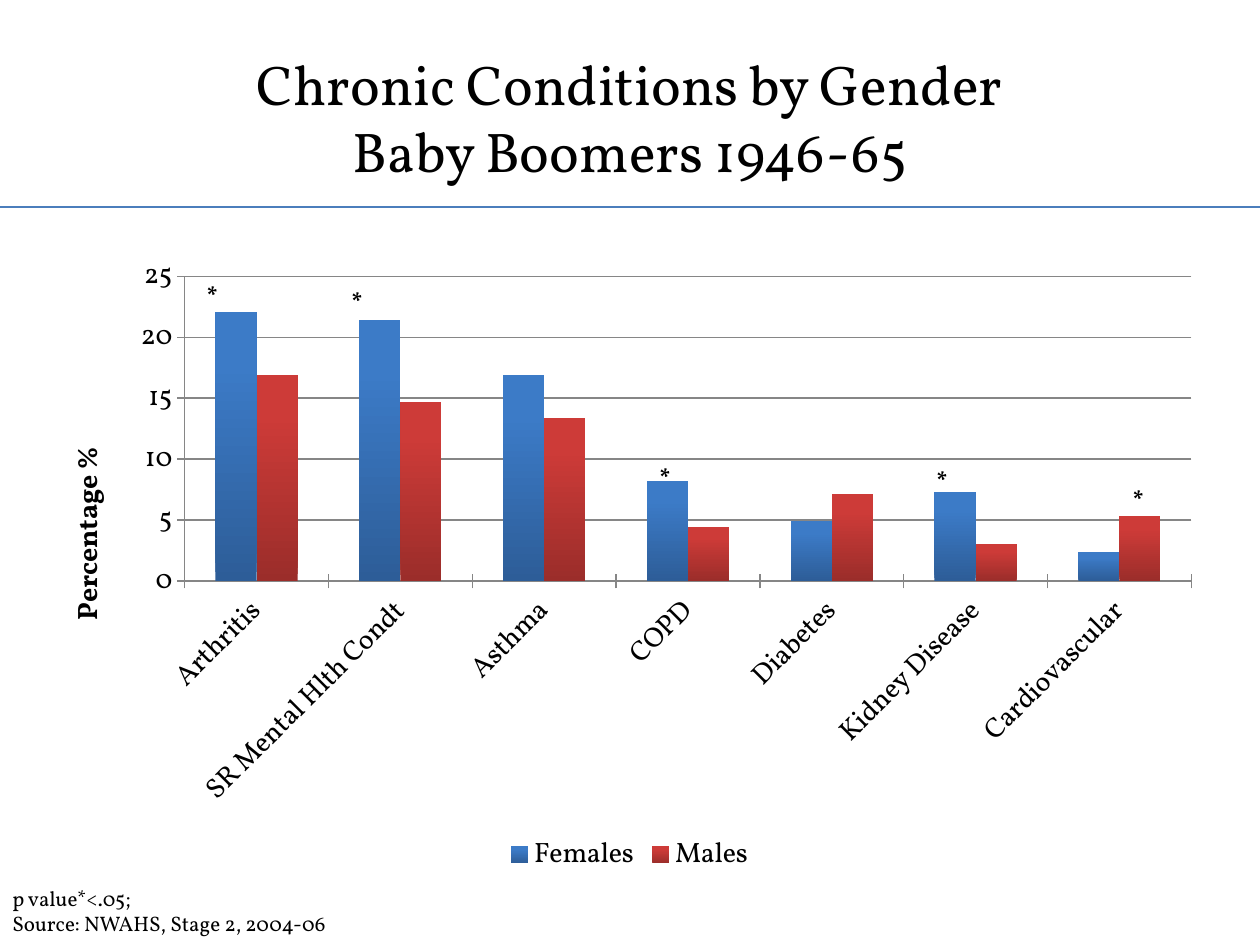
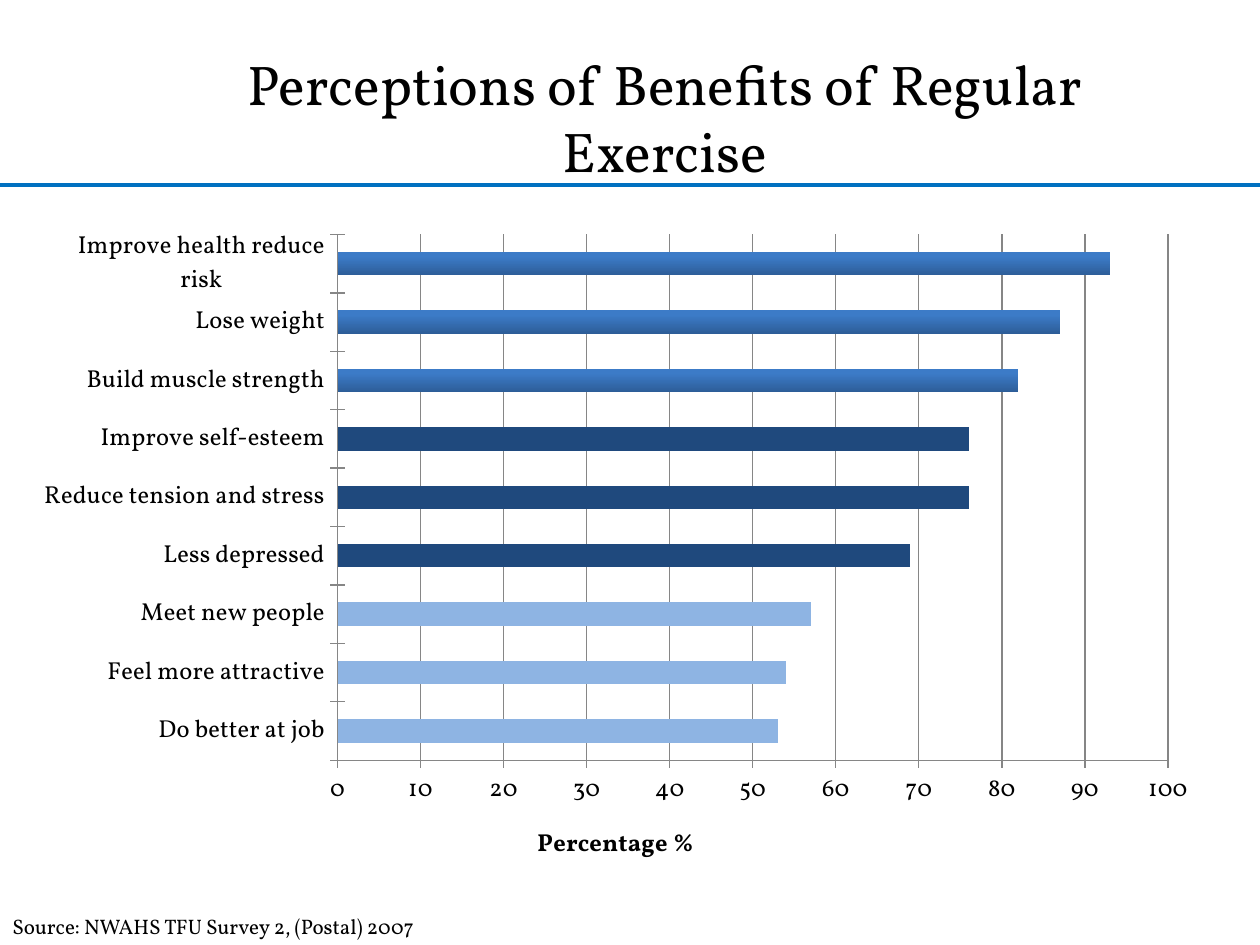
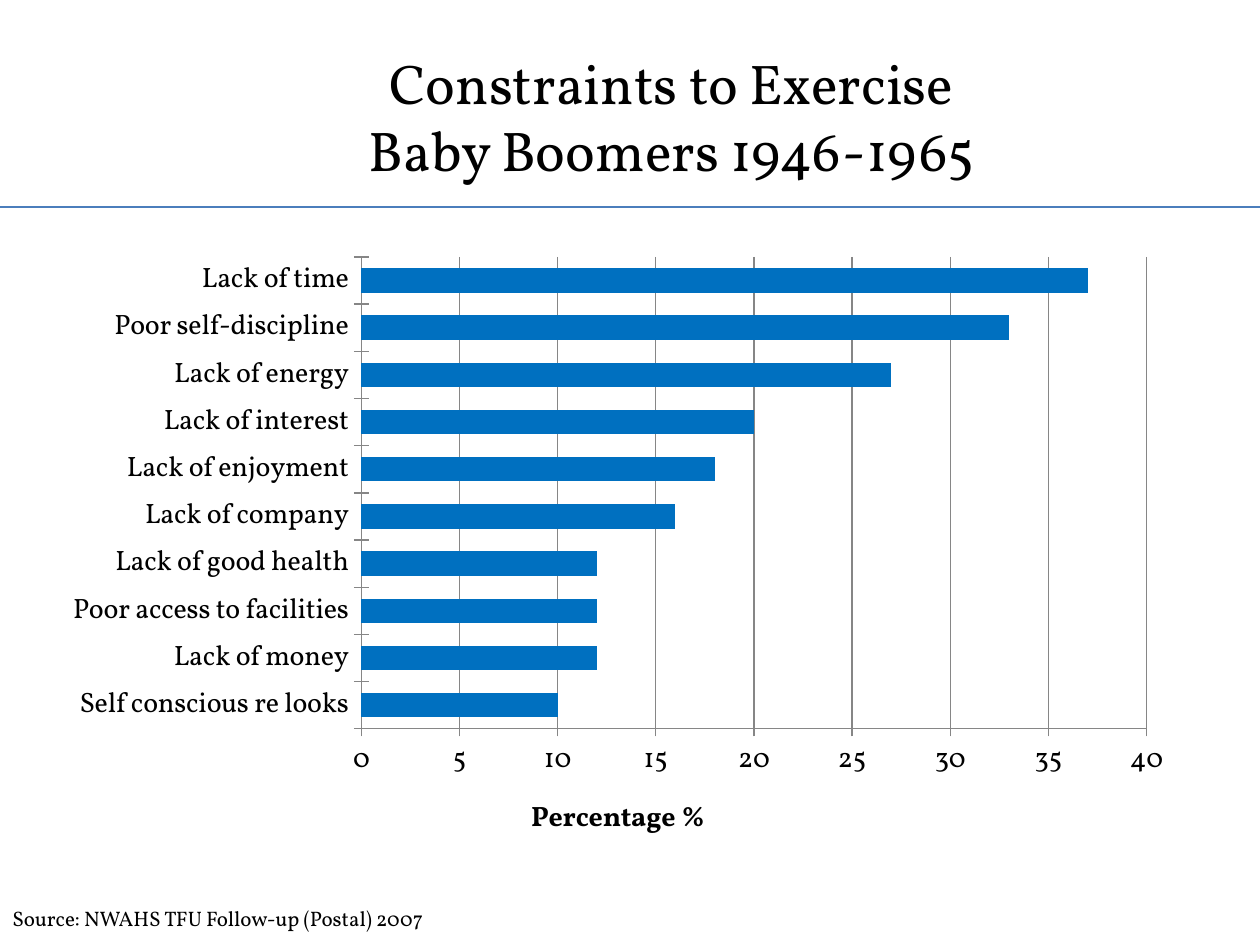
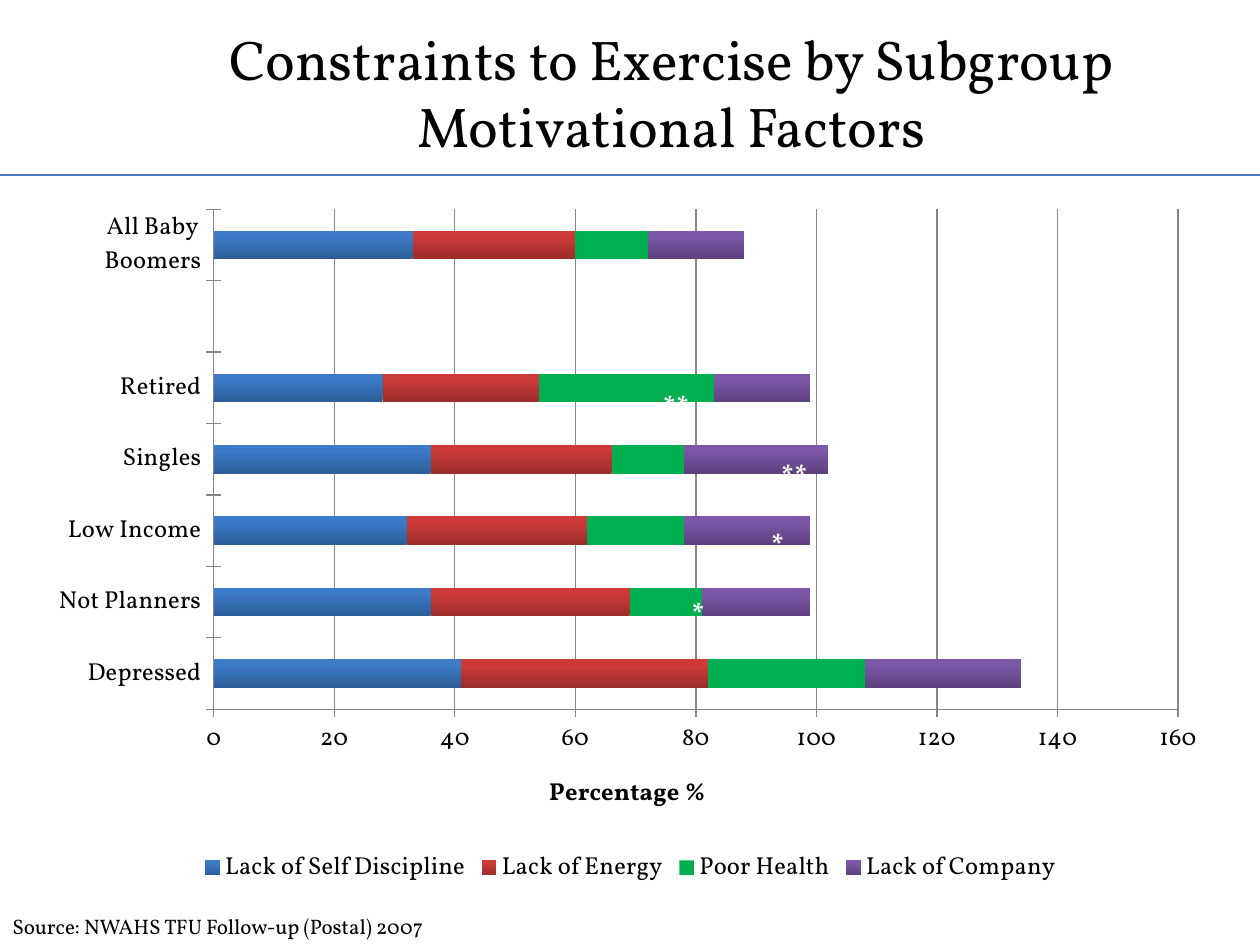
from dataclasses import dataclass

import lxml.etree
import pptx
import pptx.chart.chart
import pptx.chart.data
import pptx.dml.color
import pptx.dml.fill
import pptx.enum.chart
import pptx.enum.shapes
import pptx.enum.text
import pptx.oxml.ns
import pptx.slide
import pptx.text.text
import pptx.util

Cm = pptx.util.Cm
Pt = pptx.util.Pt
qn = pptx.oxml.ns.qn
XL = pptx.enum.chart.XL_CHART_TYPE
TICK = pptx.enum.chart.XL_TICK_MARK
ALIGN = pptx.enum.text.PP_ALIGN
ANCHOR = pptx.enum.text.MSO_ANCHOR

FONT = "Vollkorn"
SLIDE_W, SLIDE_H = 25.4, 19.05
COLORS = {
    "text": "000000",
    "white": "FFFFFF",
    "rule": "4B7EBC",
    "strong": "0070C0",
    "axis": "868686",
    "navy": "1F497D",
    "sky": "8EB4E3",
    "green": "00B050",
    "blue": "3C7BC7",
    "blue_dark": "2D5D98",
    "red": "CD3B38",
    "red_dark": "9B2D2A",
    "purple": "7C57A8",
    "purple_dark": "5D417E",
}


@dataclass(frozen=True)
class Box:
    x: float
    y: float
    w: float
    h: float

    def lengths(self) -> tuple:
        return Cm(self.x), Cm(self.y), Cm(self.w), Cm(self.h)


@dataclass(frozen=True)
class Series:
    name: str
    values: tuple
    color: str


@dataclass(frozen=True)
class ChartSpec:
    kind: int
    box: Box
    plot: Box
    categories: tuple
    series: tuple
    size: int
    top: int
    step: int
    gap: int = 150
    legend: bool = False
    point_colors: tuple = ()


@dataclass(frozen=True)
class Mark:
    text: str
    x: float
    y: float


@dataclass(frozen=True)
class Page:
    title: tuple
    title_box: Box
    rule_y: float
    source: tuple
    source_box: Box
    chart: ChartSpec
    rule_color: str = "rule"
    rule_width: float = 1.5
    marks: tuple = ()
    mark_color: str = "text"
    mark_size: int = 14


def rgb(name: str) -> pptx.dml.color.RGBColor:
    return pptx.dml.color.RGBColor.from_string(COLORS[name])


def style_font(font: pptx.text.text.Font, size: float, color: str = "text",
               bold: bool = False) -> None:
    font.name = FONT
    font.size = Pt(size)
    font.bold = bold
    font.color.rgb = rgb(color)


def paint(fill: pptx.dml.fill.FillFormat, color: str) -> None:
    dark = f"{color}_dark"
    if dark not in COLORS:
        fill.solid()
        fill.fore_color.rgb = rgb(color)
        return
    fill.gradient()
    fill.gradient_angle = 90
    bottom, top = fill.gradient_stops
    bottom.color.rgb = rgb(dark)
    top.color.rgb = rgb(color)
    top.position = 0.8


def add_text(s: pptx.slide.Slide, box: Box, lines: tuple, size: float,
             color: str = "text", bold: bool = False) -> pptx.text.text.TextFrame:
    sp = s.shapes.add_textbox(*box.lengths())
    tf = sp.text_frame
    tf.word_wrap = True
    for i, line in enumerate(lines):
        p = tf.paragraphs[0] if i == 0 else tf.add_paragraph()
        r = p.add_run()
        r.text = line
        style_font(r.font, size, color, bold)
    return tf


def add_title(s: pptx.slide.Slide, page: Page) -> None:
    tf = add_text(s, page.title_box, page.title[:1], 32)
    tf.vertical_anchor = ANCHOR.MIDDLE
    p = tf.paragraphs[0]
    p.alignment = ALIGN.CENTER
    for line in page.title[1:]:
        p.add_line_break()
        r = p.add_run()
        r.text = line
        style_font(r.font, 32)


def add_rule(s: pptx.slide.Slide, page: Page) -> None:
    y = Cm(page.rule_y)
    cx = s.shapes.add_connector(
        pptx.enum.shapes.MSO_CONNECTOR.STRAIGHT, 0, y, Cm(SLIDE_W), y)
    cx.line.color.rgb = rgb(page.rule_color)
    cx.line.width = Pt(page.rule_width)
    lxml.etree.SubElement(cx.element.spPr, qn("a:effectLst"))


def set_plot_layout(chart: pptx.chart.chart.Chart, plot: Box) -> None:
    area = chart.element.xpath("c:chart/c:plotArea")[0]
    for old in area.findall(qn("c:layout")):
        area.remove(old)
    layout = lxml.etree.Element(qn("c:layout"))
    area.insert(0, layout)
    manual = lxml.etree.SubElement(layout, qn("c:manualLayout"))
    entries = (("layoutTarget", "inner"), ("xMode", "edge"), ("yMode", "edge"),
               ("x", plot.x), ("y", plot.y), ("w", plot.w), ("h", plot.h))
    for tag, value in entries:
        lxml.etree.SubElement(manual, qn(f"c:{tag}")).set("val", str(value))


def rotate_text(chart: pptx.chart.chart.Chart, query: str, degrees: int) -> None:
    for body in chart.element.xpath(query):
        body.set("rot", str(degrees * 60000))
        body.set("vert", "horz")


def style_axes(chart: pptx.chart.chart.Chart, spec: ChartSpec) -> None:
    value_axis = chart.value_axis
    for axis in (chart.category_axis, value_axis):
        axis.major_tick_mark = TICK.CROSS
        axis.minor_tick_mark = TICK.NONE
        axis.format.line.color.rgb = rgb("axis")
        style_font(axis.tick_labels.font, spec.size)
    chart.category_axis.has_major_gridlines = False
    value_axis.has_major_gridlines = True
    value_axis.major_gridlines.format.line.color.rgb = rgb("axis")
    value_axis.minimum_scale = 0
    value_axis.maximum_scale = spec.top
    value_axis.major_unit = spec.step
    r = value_axis.axis_title.text_frame.paragraphs[0].add_run()
    r.text = "Percentage %"
    style_font(r.font, spec.size, bold=True)
    if spec.kind == XL.COLUMN_CLUSTERED:
        rotate_text(chart, "//c:catAx/c:txPr/a:bodyPr", -45)
        rotate_text(chart, "//c:valAx/c:title//a:bodyPr", -90)


def add_chart(s: pptx.slide.Slide, spec: ChartSpec) -> None:
    data = pptx.chart.data.CategoryChartData()
    data.categories = spec.categories
    for series in spec.series:
        data.add_series(series.name, series.values)
    chart = s.shapes.add_chart(spec.kind, *spec.box.lengths(), data).chart
    style_font(chart.font, 10)
    chart.has_title = False
    chart.has_legend = spec.legend
    if spec.legend:
        chart.legend.position = pptx.enum.chart.XL_LEGEND_POSITION.BOTTOM
        chart.legend.include_in_layout = False
        style_font(chart.legend.font, spec.size)
    plot = chart.plots[0]
    plot.vary_by_categories = False
    plot.gap_width = spec.gap
    plot.overlap = 100 if spec.kind == XL.BAR_STACKED else 0
    for drawn, series in zip(plot.series, spec.series):
        paint(drawn.format.fill, series.color)
    for i, color in enumerate(spec.point_colors):
        paint(plot.series[0].points[i].format.fill, color)
    style_axes(chart, spec)
    set_plot_layout(chart, spec.plot)


def add_page(prs: pptx.presentation.Presentation, page: Page) -> None:
    s = prs.slides.add_slide(prs.slide_layouts[6])
    add_title(s, page)
    add_rule(s, page)
    add_text(s, page.source_box, page.source, 12)
    add_chart(s, page.chart)
    for mark in page.marks:
        box = Box(mark.x, mark.y, 0.8 * len(mark.text), 0.9)
        add_text(s, box, (mark.text,), page.mark_size, page.mark_color, True)


FOLLOW_UP = ("Source: NWAHS TFU Follow-up (Postal) 2007",)

PAGES = (
    Page(
        title=("Chronic Conditions by Gender", "Baby Boomers 1946-65"),
        title_box=Box(1.27, 0.76, 22.86, 3.18),
        rule_y=4.17,
        source=("p value*<.05;", "Source: NWAHS, Stage 2, 2004-06"),
        source_box=Box(0, 17.73, 9.9, 1.27),
        chart=ChartSpec(
            XL.COLUMN_CLUSTERED, Box(0.89, 4.93, 23.6, 12.8),
            Box(0.12, 0.05, 0.86, 0.48),
            ("Arthritis", "SR Mental Hlth Condt", "Asthma", "COPD",
             "Diabetes", "Kidney Disease", "Cardiovascular"),
            (Series("Females", (22.1, 21.4, 16.9, 8.2, 4.9, 7.3, 2.4), "blue"),
             Series("Males", (16.9, 14.7, 13.4, 4.4, 7.1, 3, 5.3), "red")),
            size=16, top=25, step=5, legend=True),
        marks=(Mark("*", 3.91, 5.54), Mark("*", 6.83, 5.66),
               Mark("*", 13.04, 9.2), Mark("*", 18.62, 9.27),
               Mark("*", 22.58, 9.65)),
    ),
    Page(
        title=("Perceptions of Benefits of Regular Exercise",),
        title_box=Box(2.69, 0.76, 21.44, 3.18),
        rule_y=3.73,
        rule_color="strong",
        rule_width=2.25,
        source=("Source: NWAHS TFU Survey 2, (Postal) 2007",),
        source_box=Box(0, 18.29, 13.9, 0.76),
        chart=ChartSpec(
            XL.BAR_CLUSTERED, Box(0.89, 4.32, 23.6, 13.59),
            Box(0.25, 0.03, 0.71, 0.78),
            ("Do better at job", "Feel more attractive", "Meet new people",
             "Less depressed", "Reduce tension and stress",
             "Improve self-esteem", "Build muscle strength", "Lose weight",
             "Improve health reduce risk"),
            (Series("Series 1", (53, 54, 57, 69, 76, 76, 82, 87, 93), "blue"),),
            size=14, top=100, step=10,
            point_colors=("sky",) * 3 + ("navy",) * 3),
    ),
    Page(
        title=("Constraints to Exercise", "Baby Boomers 1946-1965"),
        title_box=Box(2.11, 0.74, 22.86, 3.18),
        rule_y=4.17,
        source=FOLLOW_UP,
        source_box=Box(0, 18.14, 9.9, 0.76),
        chart=ChartSpec(
            XL.BAR_STACKED, Box(1.09, 4.93, 22.94, 12.52),
            Box(0.27, 0.02, 0.69, 0.76),
            ("Self conscious re looks", "Lack of money",
             "Poor access to facilities", "Lack of good health",
             "Lack of company", "Lack of enjoyment", "Lack of interest",
             "Lack of energy", "Poor self-discipline", "Lack of time"),
            (Series("Series 1", (10, 12, 12, 12, 16, 18, 20, 27, 33, 37),
                    "strong"),),
            size=16, top=40, step=5, gap=94),
    ),
    Page(
        title=("Constraints to Exercise by Subgroup Motivational Factors",),
        title_box=Box(2.11, 0.74, 22.86, 2.21),
        rule_y=3.53,
        source=FOLLOW_UP,
        source_box=Box(0, 18.29, 9.9, 0.76),
        chart=ChartSpec(
            XL.BAR_STACKED, Box(0.71, 3.94, 24, 14),
            Box(0.15, 0.02, 0.81, 0.72),
            ("Depressed", "Not Planners", "Low Income", "Singles", "Retired",
             "", "All Baby Boomers"),
            (Series("Lack of Self Discipline",
                    (41, 36, 32, 36, 28, None, 33), "blue"),
             Series("Lack of Energy", (41, 33, 30, 30, 26, None, 27), "red"),
             Series("Poor Health", (26, 12, 16, 12, 29, None, 12), "green"),
             Series("Lack of Company",
                    (26, 18, 21, 24, 16, None, 16), "purple")),
            size=14, top=160, step=20, legend=True),
        marks=(Mark("**", 13.11, 7.72), Mark("**", 15.49, 9.12),
               Mark("*", 15.29, 10.52), Mark("*", 13.69, 11.91)),
        mark_color="white",
        mark_size=16,
    ),
)


def main() -> None:
    prs = pptx.Presentation()
    prs.slide_width = Cm(SLIDE_W)
    prs.slide_height = Cm(SLIDE_H)
    for page in PAGES:
        add_page(prs, page)
    prs.save("out.pptx")


if __name__ == "__main__":
    main()
